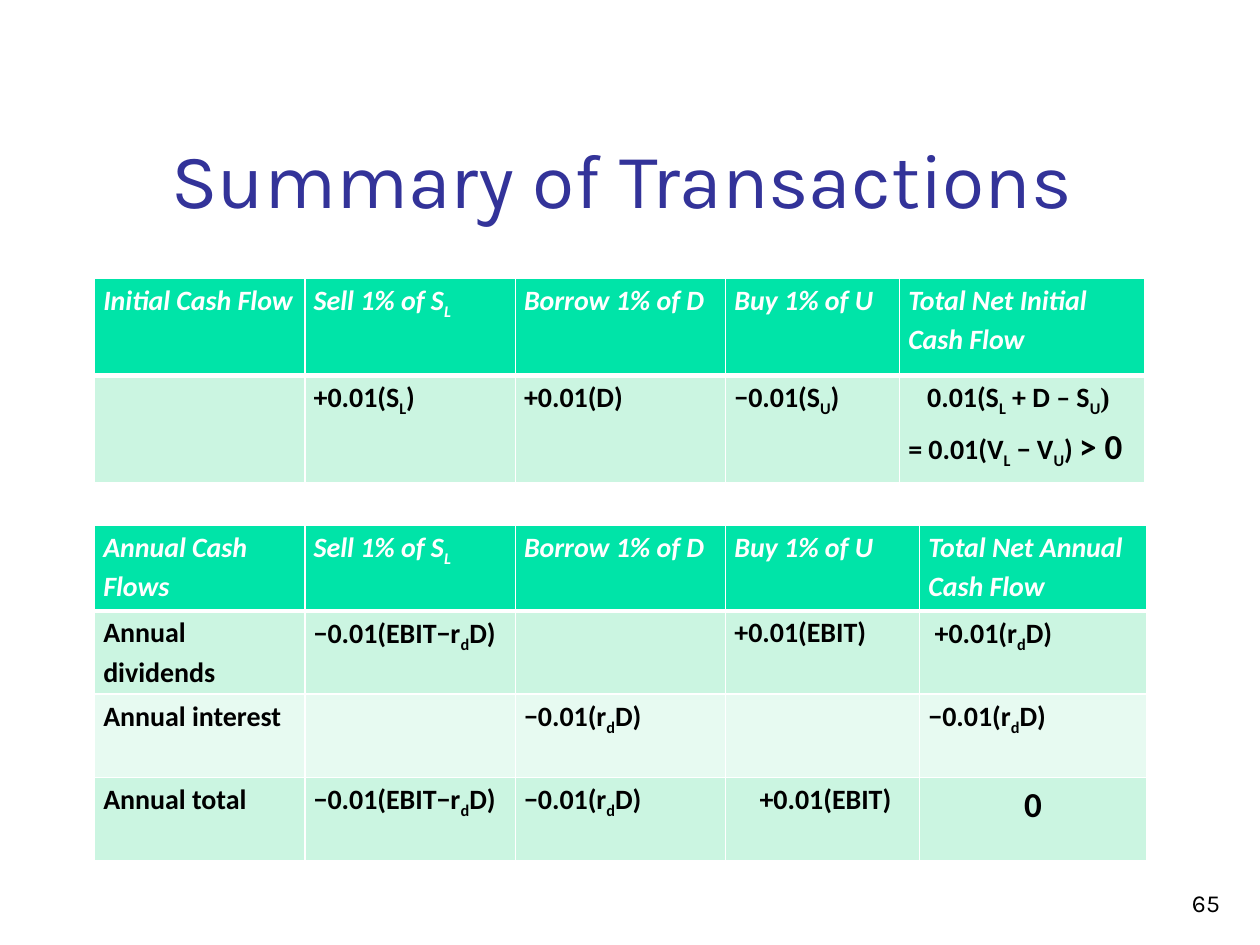
"""Build the slide that summarises the arbitrage transactions."""
from lxml.etree import SubElement
from pptx import Presentation
from pptx.dml.color import RGBColor
from pptx.enum.text import MSO_ANCHOR as Anchor, PP_ALIGN as Align
from pptx.oxml.ns import qn
from pptx.util import Inches, Pt

color = RGBColor.from_string
HEADER, BAND, LIGHT = "00E4A8", "CBF5E1", "E7FAF1"


def write(paragraph, text, font="Calibri", size=16, ink="000000",
          bold=True, italic=False, align=None, spacing=1.15, indent=0):
    """Append text, lowering each character that follows an underscore."""
    paragraph.line_spacing = spacing
    if align is not None:
        paragraph.alignment = align
    if indent:
        paragraph._p.get_or_add_pPr().set("indent", str(Inches(indent)))
    first, *others = text.split("_")
    pieces = [(first, False)]
    for other in others:
        pieces += [(other[0], True), (other[1:], False)]
    for piece, lowered in pieces:
        if not piece:
            continue
        run = paragraph.add_run()
        run.text = piece
        run.font.name, run.font.size = font, Pt(size)
        run.font.bold, run.font.italic = bold, italic
        run.font.color.rgb = color(ink)
        if lowered:
            run.font._element.set("baseline", "-25000")


presentation = Presentation()
presentation.slide_width, presentation.slide_height = Inches(10), Inches(7.5)
slide = presentation.slides.add_slide(presentation.slide_layouts[6])

labels = [
    ("Summary of Transactions", (1.26, 0.23, 8.52, 1.6), 44, "333399", Align.LEFT),
    ("65", (7.7, 6.83, 2.08, 0.5), 14, "000000", Align.RIGHT),
]
for text, place, size, ink, align in labels:
    frame = slide.shapes.add_textbox(*map(Inches, place)).text_frame
    frame.word_wrap = True
    frame.vertical_anchor = Anchor.BOTTOM
    write(frame.paragraphs[0], text, font="Karla", size=size, ink=ink,
          bold=False, align=align, spacing=1.0)

trades = ["Sell 1% of S_L", "Borrow 1% of D", "Buy 1% of U"]
dividends, interest = "−0.01(EBIT−r_dD)", "−0.01(r_dD)"
initial_rows = [
    ["Initial Cash Flow", *trades, "Total Net Initial Cash Flow"],
    ["", "+0.01(S_L)", "+0.01(D)", "−0.01(S_U)", ""],
]
annual_rows = [
    ["Annual Cash Flows", *trades, "Total Net Annual Cash Flow"],
    ["Annual dividends", dividends, "", "+0.01(EBIT)", "+0.01(r_dD)"],
    ["Annual interest", "", interest, "", interest],
    ["Annual total", dividends, interest, "+0.01(EBIT)", ""],
]
annual_indents = {(1, 4): 0.05, (3, 3): 0.2}
layouts = [
    (initial_rows, 2.21, [1.67, 1.67, 1.67, 1.38, 1.95], [0.77, 0.85], {}),
    (annual_rows, 4.17, [1.67, 1.67, 1.67, 1.54, 1.8],
     [0.68, 0.66, 0.66, 0.66], annual_indents),
]
tables = []
for rows, top, widths, heights, indents in layouts:
    table = slide.shapes.add_table(
        len(rows), len(widths), Inches(0.75), Inches(top),
        Inches(sum(widths)), Inches(sum(heights))).table
    tables.append(table)
    for column, width in zip(table.columns, widths):
        column.width = Inches(width)
    for row_index, (texts, height) in enumerate(zip(rows, heights)):
        table.rows[row_index].height = Inches(height)
        is_header = row_index == 0
        fill = HEADER if is_header else BAND if row_index % 2 else LIGHT
        border_widths = {"L": 1, "R": 1, "T": 3 if row_index == 1 else 1,
                         "B": 3 if is_header else 1}
        for column_index, text in enumerate(texts):
            cell = table.cell(row_index, column_index)
            cell.margin_left = cell.margin_right = Inches(0.07)
            cell.margin_top = cell.margin_bottom = 0
            properties = cell._tc.get_or_add_tcPr()
            for side, width in border_widths.items():
                line = SubElement(properties, qn(f"a:ln{side}"), w=str(Pt(width)))
                SubElement(SubElement(line, qn("a:solidFill")),
                           qn("a:srgbClr"), val="FFFFFF")
            cell.fill.solid()
            cell.fill.fore_color.rgb = color(fill)
            if text:
                write(cell.text_frame.paragraphs[0], text, italic=is_header,
                      ink="FFFFFF" if is_header else "000000",
                      indent=indents.get((row_index, column_index), 0))

initial_table, annual_table = tables
net_frame = initial_table.cell(1, 4).text_frame
net_sum = net_frame.paragraphs[0]
write(net_sum, "0.01(S_L + D – S_U", indent=0.15)
write(net_sum, ")", font="Times New Roman")
net_value = net_frame.add_paragraph()
write(net_value, "= 0.01(V_L − V_U) ")
write(net_value, "> 0", size=20)
write(annual_table.cell(3, 4).text_frame.paragraphs[0], "0", size=20,
      align=Align.CENTER)

presentation.save("out.pptx")
